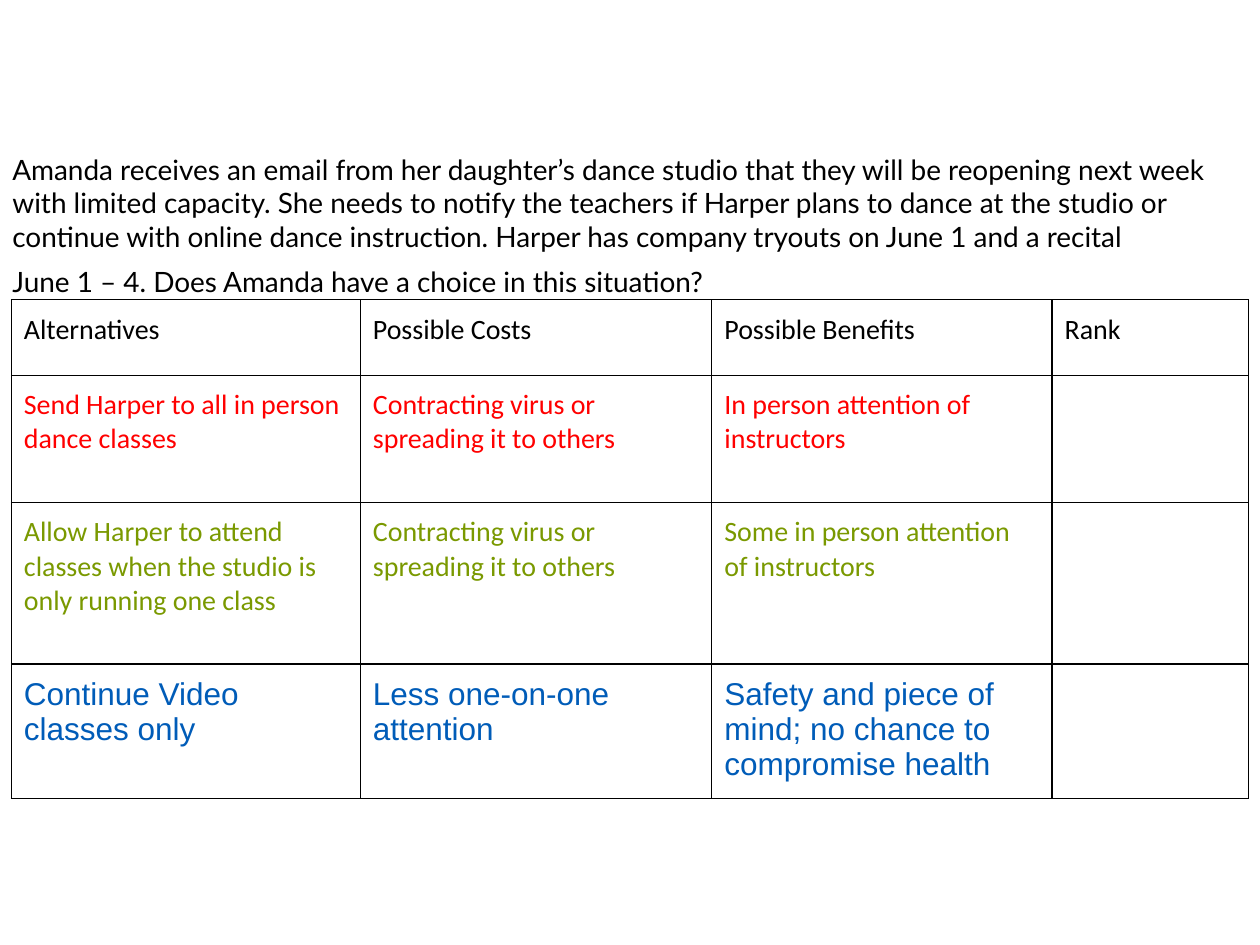
import dataclasses

import lxml.etree
import pptx
import pptx.dml.color
import pptx.enum.text
import pptx.oxml.ns
import pptx.util

BLACK = pptx.dml.color.RGBColor(0x00, 0x00, 0x00)
RED = pptx.dml.color.RGBColor(0xFF, 0x00, 0x00)
GREEN = pptx.dml.color.RGBColor(0x7A, 0x99, 0x00)
BLUE = pptx.dml.color.RGBColor(0x00, 0x5C, 0xB8)

SLIDE_WIDTH, SLIDE_HEIGHT = 10, 7.5
TABLE_LEFT, TABLE_TOP = 0.09, 2.38
COLUMN_WIDTHS = (2.77, 2.79, 2.7, 1.56)
CELL_MARGIN = 0.1
BORDER_POINTS = 0.75

SITUATION = (
    "Amanda receives an email from her daughter’s dance studio that they will be "
    "reopening next week with limited capacity. She needs to notify the teachers if "
    "Harper plans to dance at the studio or continue with online dance instruction. "
    "Harper has company tryouts on June 1 and a recital",
    "June 1 – 4. Does Amanda have a choice in this situation?",
)


@dataclasses.dataclass(frozen=True)
class DecisionRow:
    height: float
    color: pptx.dml.color.RGBColor
    texts: tuple[str, ...]
    font_name: str = "Calibri"
    font_size: int = 16


DECISION_ROWS = (
    DecisionRow(0.6, BLACK, ("Alternatives", "Possible Costs", "Possible Benefits", "Rank")),
    DecisionRow(1.01, RED, (
        "Send Harper to all in person dance classes",
        "Contracting virus or spreading it to others",
        "In person attention of instructors",
        "",
    )),
    DecisionRow(1.28, GREEN, (
        "Allow Harper to attend classes when the studio is only running one class",
        "Contracting virus or spreading it to others",
        "Some in person attention of instructors",
        "",
    )),
    DecisionRow(1.07, BLUE, (
        "Continue Video classes only",
        "Less one-on-one attention",
        "Safety and piece of mind; no chance to compromise health",
        "",
    ), "Arial", 18),
)


def set_attributes(target: object, values: dict[str, object]) -> None:
    for name, value in values.items():
        setattr(target, name, value)


def format_font(font, name: str, size: int, color: pptx.dml.color.RGBColor) -> None:
    set_attributes(font, {"name": name, "size": pptx.util.Pt(size), "bold": False})
    font.color.rgb = color


def add_borders(cell) -> None:
    """Insert the four edge lines ahead of the cell's fill, as the schema asks."""
    properties = cell._tc.get_or_add_tcPr()
    for position, edge in enumerate(("lnL", "lnR", "lnT", "lnB")):
        line = lxml.etree.Element(pptx.oxml.ns.qn(f"a:{edge}"))
        line.set("w", str(pptx.util.Pt(BORDER_POINTS)))
        fill = lxml.etree.SubElement(line, pptx.oxml.ns.qn("a:solidFill"))
        color = lxml.etree.SubElement(fill, pptx.oxml.ns.qn("a:srgbClr"))
        color.set("val", str(BLACK))
        properties.insert(position, line)


def fill_cell(cell, text: str, row: DecisionRow) -> None:
    margin = pptx.util.Inches(CELL_MARGIN)
    sides = ("left", "right", "top", "bottom")
    set_attributes(cell, {f"margin_{side}": margin for side in sides})
    cell.fill.background()
    add_borders(cell)
    if text:
        cell.text = text
        run = cell.text_frame.paragraphs[0].runs[0]
        format_font(run.font, row.font_name, row.font_size, row.color)


def add_decision_table(slide) -> None:
    shape = slide.shapes.add_table(
        len(DECISION_ROWS), len(COLUMN_WIDTHS),
        pptx.util.Inches(TABLE_LEFT), pptx.util.Inches(TABLE_TOP),
        pptx.util.Inches(sum(COLUMN_WIDTHS)),
        pptx.util.Inches(sum(row.height for row in DECISION_ROWS)),
    )
    table = shape.table
    set_attributes(table, {"first_row": False, "horz_banding": False})
    for column, width in zip(table.columns, COLUMN_WIDTHS):
        column.width = pptx.util.Inches(width)
    for table_row, row in zip(table.rows, DECISION_ROWS):
        table_row.height = pptx.util.Inches(row.height)
        for cell, text in zip(table_row.cells, row.texts):
            fill_cell(cell, text, row)


def add_situation(slide) -> None:
    box = slide.shapes.add_textbox(
        0, pptx.util.Inches(1.16), pptx.util.Inches(9.91), pptx.util.Inches(1.26)
    )
    frame = box.text_frame
    set_attributes(frame, {
        "word_wrap": True,
        "auto_size": pptx.enum.text.MSO_AUTO_SIZE.SHAPE_TO_FIT_TEXT,
    })
    frame.text = "\n".join(SITUATION)
    for paragraph in frame.paragraphs:
        format_font(paragraph.runs[0].font, "Lato", 16, BLACK)
    for paragraph in frame.paragraphs[1:]:
        paragraph.space_before = pptx.util.Pt(6.4)


def main() -> None:
    presentation = pptx.Presentation()
    set_attributes(presentation, {
        "slide_width": pptx.util.Inches(SLIDE_WIDTH),
        "slide_height": pptx.util.Inches(SLIDE_HEIGHT),
    })
    slide = presentation.slides.add_slide(presentation.slide_layouts.get_by_name("Blank"))
    add_decision_table(slide)
    add_situation(slide)
    presentation.save("out.pptx")


if __name__ == "__main__":
    main()
